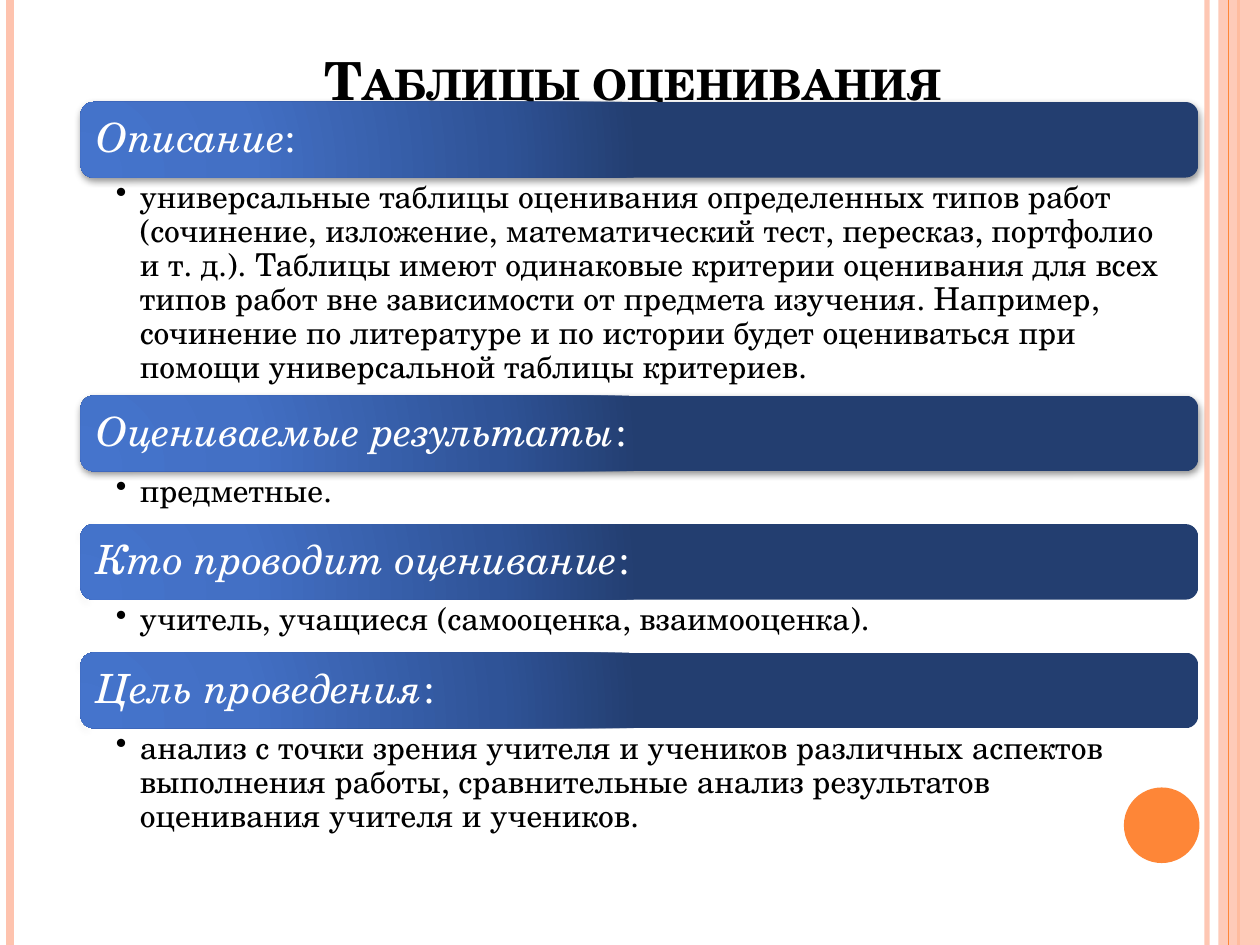
from dataclasses import dataclass

from lxml.etree import SubElement
from pptx import Presentation
from pptx.dml.color import RGBColor
from pptx.enum.shapes import MSO_CONNECTOR, MSO_SHAPE
from pptx.enum.text import MSO_ANCHOR, PP_ALIGN
from pptx.oxml import parse_xml
from pptx.oxml.ns import nsdecls, qn
from pptx.util import Inches, Pt


@dataclass(frozen=True)
class Theme:
    font: str = "TeX Gyre Schola"
    ink: str = "000000"
    paper: str = "FFFFFF"
    peach: str = "FEC3AE"
    orange: str = "FE8637"
    blues: tuple = ((0, "4574CC"), (30, "4370C5"), (75, "2F5397"), (100, "233E70"))
    title: int = 30
    head: int = 23
    body: int = 18


THEME = Theme()
WIDE, HIGH = 10, 7.5
BAR = 0.6

# heading, body text, body height
PARTS = [
    ("Описание",
     "универсальные таблицы оценивания определенных типов работ (сочинение, "
     "изложение, математический тест, пересказ, портфолио и т. д.). Таблицы имеют "
     "одинаковые критерии оценивания для всех типов работ вне зависимости от "
     "предмета изучения. Например, сочинение по литературе и по истории будет "
     "оцениваться при помощи универсальной таблицы критериев.", 1.73),
    ("Оцениваемые результаты", "предметные.", 0.42),
    ("Кто проводит оценивание", "учитель, учащиеся (самооценка, взаимооценка).", 0.42),
    ("Цель проведения",
     "анализ с точки зрения учителя и учеников различных аспектов выполнения "
     "работы, сравнительные анализ результатов оценивания учителя и учеников.", 0.89),
]


def assign(item, values):
    for name, value in values.items():
        setattr(item, name, value)


def add_run(para, text, size, color, **style):
    run = para.add_run()
    run.text = text
    assign(run.font, {"name": THEME.font, "size": Pt(size), **style})
    run.font.color.rgb = RGBColor.from_string(color)
    return run


def add_text(slide, box, pads, **style):
    """Add a wrapped text box with pads (left, top, right, bottom); return its paragraph."""
    frame = slide.shapes.add_textbox(*map(Inches, box)).text_frame
    sides = ("margin_left", "margin_top", "margin_right", "margin_bottom")
    assign(frame, {"word_wrap": True, **dict(zip(sides, map(Inches, pads))), **style})
    return frame.paragraphs[0]


def add_plain(slide, kind, box, color):
    shape = slide.shapes.add_shape(kind, *map(Inches, box))
    shape.shadow.inherit = False
    shape.fill.solid()
    shape.fill.fore_color.rgb = RGBColor.from_string(color)
    shape.line.fill.background()
    return shape


def set_alpha(format_fill, percent):
    color = format_fill.fore_color._xFill.find(qn("a:srgbClr"))
    SubElement(color, qn("a:alpha"), val=str(percent * 1000))


def add_rule(slide, x, color, width, alpha=100):
    """Add an upright line over the full slide height."""
    rule = slide.shapes.add_connector(
        MSO_CONNECTOR.STRAIGHT, Inches(x), 0, Inches(x), Inches(HIGH))
    rule.line.width = Pt(width)
    rule.line.color.rgb = RGBColor.from_string(color)
    fill = rule.line._ln.find(qn("a:solidFill"))
    if alpha < 100:
        SubElement(fill[0], qn("a:alpha"), val=str(alpha * 1000))
    SubElement(rule._element.spPr, qn("a:effectLst"))


def add_frame(slide):
    """Add the stripes at both edges and the round mark."""
    add_rule(slide, 9.58, THEME.peach, 3, 93)
    add_rule(slide, 0.08, THEME.peach, 4.5)
    add_rule(slide, 9.83, THEME.orange, 1.5)
    band = add_plain(slide, MSO_SHAPE.RECTANGLE, (9.67, 0, WIDE - 9.67, HIGH), THEME.peach)
    color = band._element.spPr.find(qn("a:solidFill"))[0]
    SubElement(color, qn("a:alpha"), val="87000")
    add_rule(slide, 9.75, THEME.orange, 0.75)
    add_plain(slide, MSO_SHAPE.OVAL, (8.92, 6.25, 0.6, 0.6), THEME.orange)


def add_title(slide, box, text):
    para = add_text(slide, box, (0.1, 0.05, 0.1, 0.05), vertical_anchor=MSO_ANCHOR.BOTTOM)
    para.alignment = PP_ALIGN.CENTER
    run = add_run(para, text, THEME.title, THEME.ink, bold=True)
    run.font._element.set("cap", "small")


def add_bar(slide, box, text):
    """Add a shaded heading bar with its label."""
    x, y, wide, high = box
    bar = add_plain(slide, MSO_SHAPE.ROUNDED_RECTANGLE, box, THEME.blues[0][1])
    props = bar._element.spPr
    stops = "".join(f'<a:gs pos="{at * 1000}"><a:srgbClr val="{color}"/></a:gs>'
                    for at, color in THEME.blues)
    props.replace(props.find(qn("a:solidFill")), parse_xml(
        f'<a:gradFill {nsdecls("a")} rotWithShape="1"><a:gsLst>{stops}</a:gsLst>'
        '<a:path path="circle"><a:fillToRect l="5000" t="100000" r="120000" b="10000"/>'
        '</a:path></a:gradFill>'))
    props.find(qn("a:effectLst")).append(parse_xml(
        f'<a:outerShdw {nsdecls("a")} blurRad="{Pt(4)}" dist="{Pt(1.6)}" dir="5400000" '
        'rotWithShape="0"><a:srgbClr val="000000"><a:alpha val="42000"/></a:srgbClr>'
        '</a:outerShdw>'))
    inset = 0.03
    para = add_text(slide, (x + inset, y + inset, wide - 2 * inset, high - 2 * inset),
                    (0.1,) * 4, vertical_anchor=MSO_ANCHOR.MIDDLE)
    para.line_spacing = 0.9
    add_run(para, text, THEME.head, THEME.paper, italic=True)
    add_run(para, ":", THEME.head, THEME.paper)


def add_body(slide, box, text):
    para = add_text(slide, box, (0.28, 0.03, 0.18, 0.03))
    assign(para, {"level": 1, "line_spacing": 0.9})
    props = para._p.get_or_add_pPr()
    props.set("marL", str(Inches(0.19)))
    props.set("indent", str(-Inches(0.19)))
    SubElement(props, qn("a:buChar"), char="•")
    add_run(para, text, THEME.body, THEME.ink)


def add_list(slide, x, y, wide, parts):
    """Stack heading bars and their texts downwards from y."""
    for head, body, high in parts:
        add_bar(slide, (x, y, wide, BAR), head)
        add_body(slide, (x, y + BAR, wide, high), body)
        y += BAR + high


def main():
    deck = Presentation()
    assign(deck, {"slide_width": Inches(WIDE), "slide_height": Inches(HIGH)})
    slide = deck.slides.add_slide(deck.slide_layouts[6])
    add_frame(slide)
    add_title(slide, (0.9, 0.31, 8.25, 0.62), "Таблицы оценивания")
    add_list(slide, 0.64, 0.81, 8.87, PARTS)
    deck.save("out.pptx")


if __name__ == "__main__":
    main()
